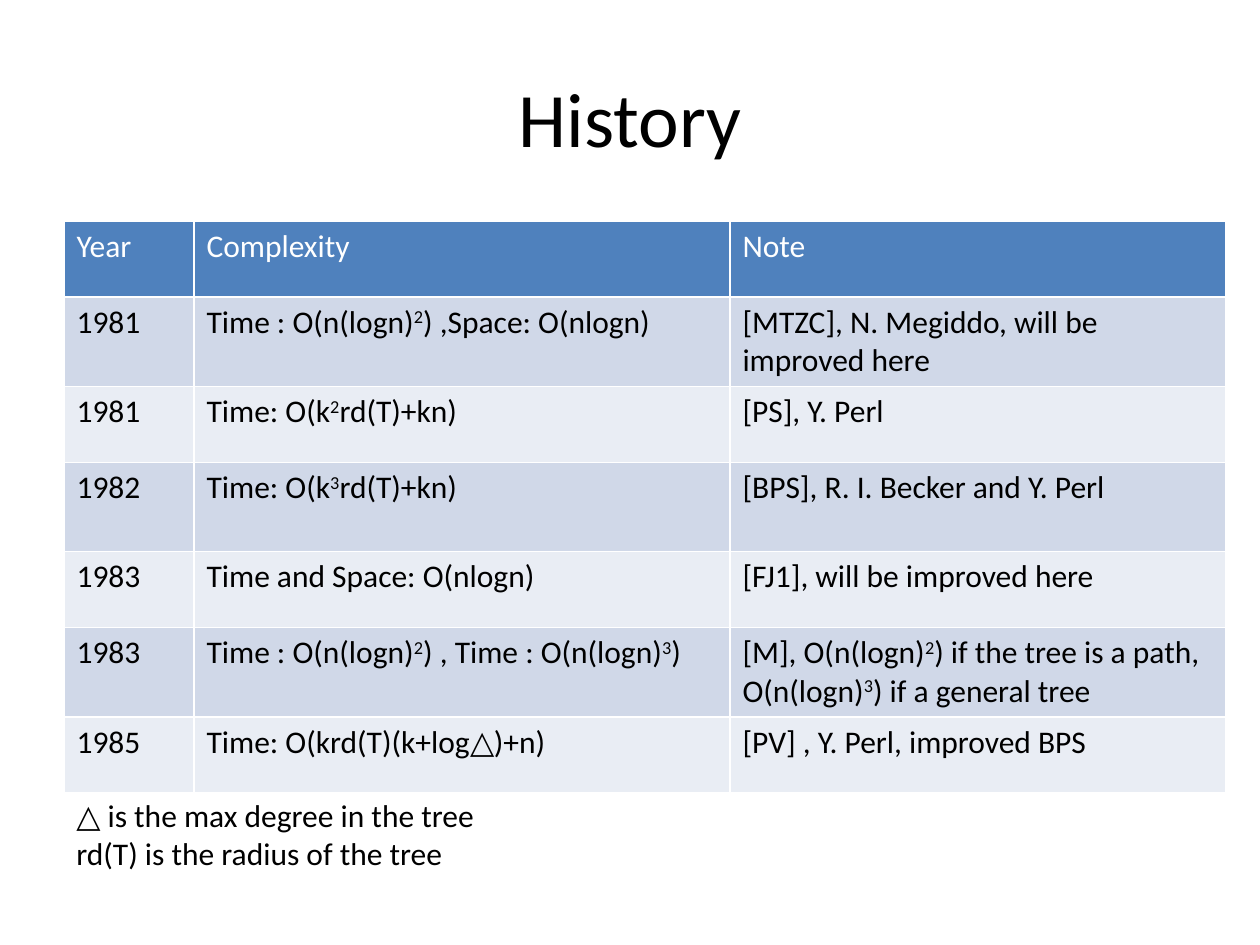
from pptx import Presentation
from pptx.dml.color import RGBColor as RGB
from pptx.enum.text import MSO_ANCHOR as Anchor, PP_ALIGN as Align
from pptx.util import Pt

PX = 914400 // 126
FONT = "Calibri"
BLACK, WHITE, HEAD = "000000", "FFFFFF", "4F81BD"
BANDS = ["E9EDF4", "D0D8E8"]

TITLE = "History"
# "^" raises the one character after it
ROWS = [
    ("Year", "Complexity", "Note"),
    ("1981", "Time : O(n(logn)^2) ,Space: O(nlogn)",
     "[MTZC], N. Megiddo, will be improved here"),
    ("1981", "Time: O(k^2rd(T)+kn)", "[PS], Y. Perl"),
    ("1982", "Time: O(k^3rd(T)+kn)", "[BPS], R. I. Becker and Y. Perl"),
    ("1983", "Time and Space: O(nlogn)", "[FJ1], will be improved here"),
    ("1983", "Time : O(n(logn)^2) , Time : O(n(logn)^3)",
     "[M], O(n(logn)^2) if the tree is a path,\nO(n(logn)^3) if a general tree"),
    ("1985", "Time: O(krd(T)(k+log△)+n)", "[PV] , Y. Perl, improved BPS"),
]
LEGEND = "△ is the max degree in the tree\nrd(T) is the radius of the tree"
COLS = [130, 536, 496]
LOW, TALL = 76, 89


def px(*vals):
    return [v * PX for v in vals]


def color(code):
    return RGB.from_string(code)


def add_run(par, text, size, code, raised=False):
    if not text:
        return
    run = par.add_run()
    run.text = text
    font = run.font
    font.name, font.size, font.bold = FONT, Pt(size), False
    font.color.rgb = color(code)
    if raised:
        font._element.set("baseline", "30000")


def write(frame, text, size=18, code=BLACK, align=Align.LEFT):
    for i, line in enumerate(text.split("\n")):
        par = frame.add_paragraph() if i else frame.paragraphs[0]
        par.alignment = align
        first, *rest = line.split("^")
        add_run(par, first, size, code)
        for part in rest:
            add_run(par, part[0], size, code, True)
            add_run(par, part[1:], size, code)


def add_grid(slide):
    highs = [TALL if r % 2 else LOW for r in range(len(ROWS))]
    box = px(64, 221, sum(COLS), sum(highs))
    grid = slide.shapes.add_table(len(ROWS), len(COLS), *box).table
    for col, wide in zip(grid.columns, px(*COLS)):
        col.width = wide
    for r, (row, high) in enumerate(zip(ROWS, px(*highs))):
        grid.rows[r].height = high
        for c, text in enumerate(row):
            cell = grid.cell(r, c)
            cell.fill.solid()
            cell.fill.fore_color.rgb = color(BANDS[r % 2] if r else HEAD)
            write(cell.text_frame, text, code=BLACK if r else WHITE)


def main():
    deck = Presentation()
    deck.slide_width, deck.slide_height = px(1260, 945)
    slide = deck.slides.add_slide(deck.slide_layouts[5])

    title = slide.shapes.title
    title.left, title.top, title.width, title.height = px(63, 38, 1134, 157)
    title.text_frame.vertical_anchor = Anchor.MIDDLE
    write(title.text_frame, TITLE, 44, align=Align.CENTER)

    add_grid(slide)

    note = slide.shapes.add_textbox(*px(64, 790, 630, 89)).text_frame
    note.word_wrap = True
    write(note, LEGEND)

    deck.save("out.pptx")


if __name__ == "__main__":
    main()
